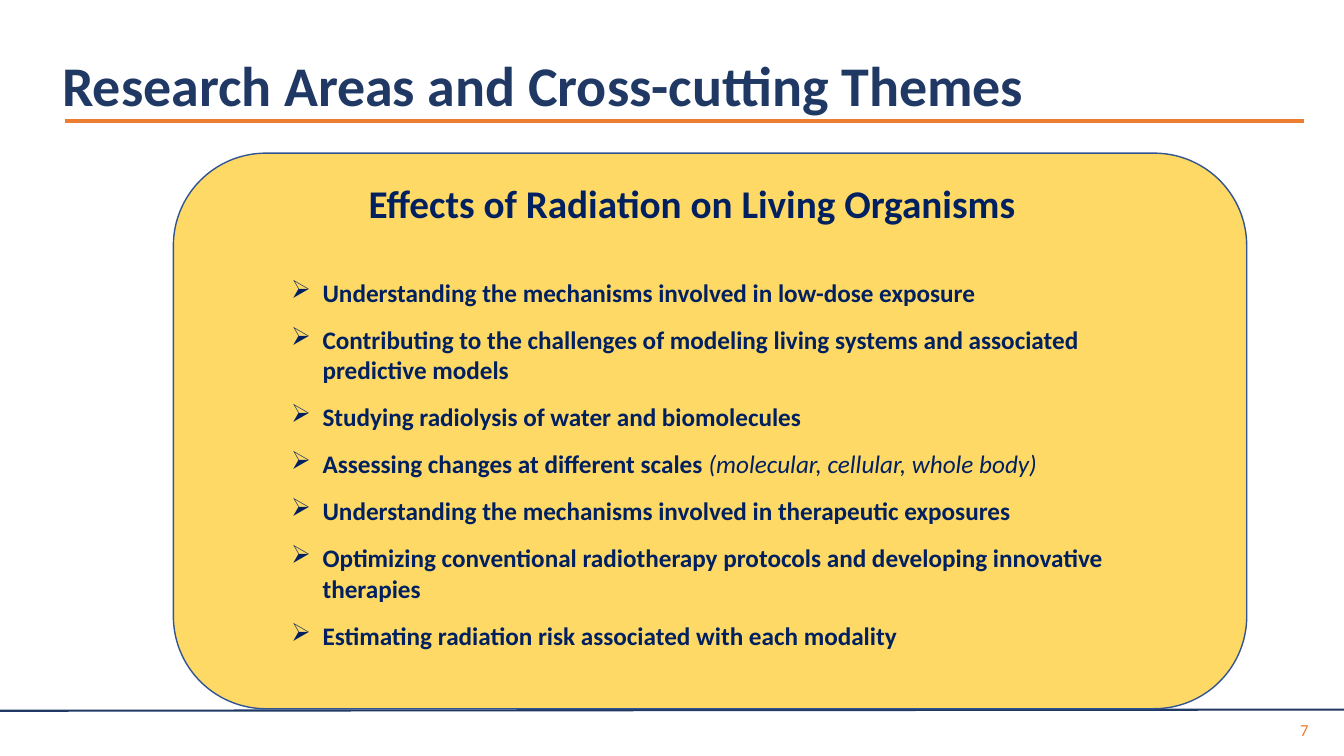
from lxml import etree
from pptx import Presentation
from pptx.dml.color import RGBColor
from pptx.enum import shapes, text
from pptx.oxml.ns import qn
from pptx.util import Cm, Pt

NAVY = RGBColor(0x20, 0x38, 0x64)
INK = RGBColor(0x00, 0x20, 0x60)
ORANGE = RGBColor(0xED, 0x7D, 0x31)
GOLD = RGBColor(0xFF, 0xD9, 0x66)
BORDER = RGBColor(0x32, 0x54, 0x91)

THEMES = [
    ("Understanding the mechanisms involved in low-dose exposure", ""),
    ("Contributing to the challenges of modeling living systems and "
     "associated predictive models", ""),
    ("Studying radiolysis of water and biomolecules", ""),
    ("Assessing changes at different scales ",
     "(molecular, cellular, whole body)"),
    ("Understanding the mechanisms involved in therapeutic exposures", ""),
    ("Optimizing conventional radiotherapy protocols and developing "
     "innovative therapies", ""),
    ("Estimating radiation risk associated with each modality", ""),
]

prs = Presentation()
prs.slide_width, prs.slide_height = Cm(33.87), Cm(19.05)
s = prs.slides.add_slide(prs.slide_layouts[6])


def style(r, size, color, bold=False, italic=False):
    r.font.name = "Calibri"
    r.font.size = Pt(size)
    r.font.color.rgb = color
    r.font.bold, r.font.italic = bold, italic


def add_text(box, words="", size=18, color=INK, bold=True,
             anchor=text.MSO_ANCHOR.TOP):
    """Add a wrapping text box at box (cm) and return its text frame."""
    tf = s.shapes.add_textbox(*map(Cm, box)).text_frame
    tf.word_wrap = True
    tf.vertical_anchor = anchor
    if words:
        tf.text = words
        style(tf.paragraphs[0].runs[0], size, color, bold)
    return tf


# Title rule and footer rule
for x1, y1, x2, y2, color, width in [
    (1.63, 3.05, 32.87, 3.05, ORANGE, 3),
    (0, 17.91, 33.87, 17.88, NAVY, 1.5),
]:
    rule = s.shapes.add_connector(shapes.MSO_CONNECTOR.STRAIGHT,
                                  Cm(x1), Cm(y1), Cm(x2), Cm(y2))
    rule.line.color.rgb = color
    rule.line.width = Pt(width)
    etree.SubElement(rule._element.spPr, qn("a:effectLst"))

number = add_text((31.88, 17.88, 1.35, 1.02), "7", 12, ORANGE, False,
                  text.MSO_ANCHOR.MIDDLE)
number.paragraphs[0].alignment = text.PP_ALIGN.RIGHT

card = s.shapes.add_shape(shapes.MSO_SHAPE.ROUNDED_RECTANGLE,
                          Cm(4.37), Cm(3.86), Cm(27.05), Cm(14))
card.shadow.inherit = False
card.fill.solid()
card.fill.fore_color.rgb = GOLD
card.line.color.rgb = BORDER
card.line.width = Pt(1)

heading = add_text((7.77, 4.39, 24.77, 1.45),
                   "Effects of Radiation on Living Organisms", 28)
heading.paragraphs[0]._p.get_or_add_pPr().set("marL", str(Cm(1.27)))

tf = add_text((7.09, 6.86, 22.4, 9.86))
for i, (theme, detail) in enumerate(THEMES):
    p = tf.add_paragraph() if i else tf.paragraphs[0]
    p.text = theme
    style(p.runs[0], 18, INK, bold=True)
    if detail:
        r = p.add_run()
        r.text = detail
        style(r, 18, INK, italic=True)
    pPr = p._p.get_or_add_pPr()
    pPr.set("marL", str(Cm(0.79)))
    pPr.set("indent", str(-Cm(0.79)))
    etree.SubElement(pPr, qn("a:buChar"), char="➢")
    p.line_spacing = Pt(21.6)
    p.space_before = Pt(6 if i else 0)
    p.space_after = Pt(6)

title = add_text((1.32, 0.38, 31.55, 3.68),
                 "Research Areas and Cross-cutting Themes", 40, NAVY,
                 anchor=text.MSO_ANCHOR.MIDDLE)
title.paragraphs[0].line_spacing = 0.9

prs.save("out.pptx")
